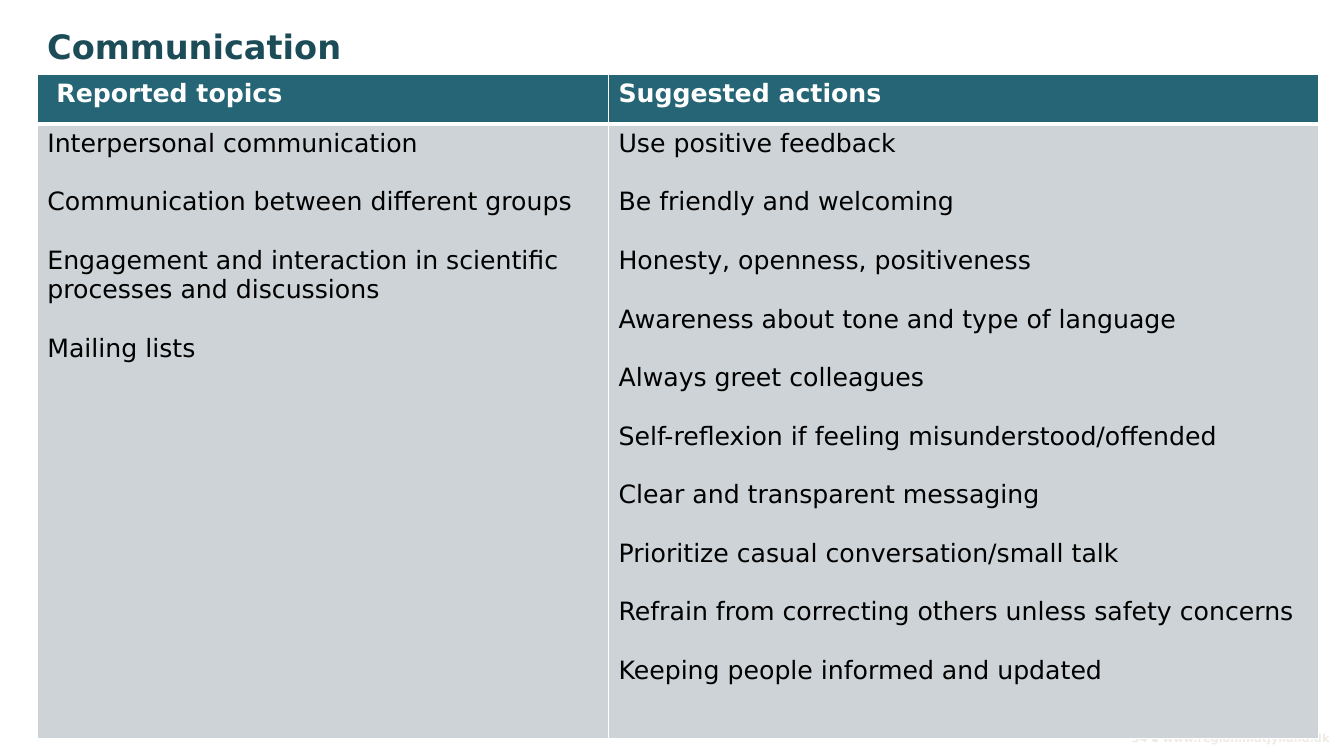
import dataclasses
import typing

import pptx
import pptx.dml.color
import pptx.enum.text
import pptx.oxml
import pptx.oxml.ns
import pptx.util

Inches = pptx.util.Inches
Pt = pptx.util.Pt

COLORS = {
    "title": "1C4C58",
    "header": "256575",
    "body": "CDD3D6",
    "white": "FFFFFF",
    "black": "000000",
    "footer": "EFECE6",
}
FONT = "DejaVu Sans"
TOPIC_GAP = 20.95


@dataclasses.dataclass(frozen=True)
class TextStyle:
    size: float
    color: str
    bold: bool = False
    align: pptx.enum.text.PP_ALIGN = pptx.enum.text.PP_ALIGN.LEFT


@dataclasses.dataclass(frozen=True)
class Label:
    text: str
    bounds: tuple[float, float, float, float]
    style: TextStyle
    frame_format: dict[str, typing.Any]


@dataclasses.dataclass(frozen=True)
class Column:
    heading: str
    width: float
    heading_margin: float
    entries: tuple[str, ...]


HEADER_STYLE = TextStyle(18, "white", bold=True)
BODY_STYLE = TextStyle(18, "black")

LABELS = (
    Label(
        "34 ▪ www.regionmidtjylland.dk",
        (9.81, 7.05, 3.39, 0.34),
        TextStyle(8, "footer", True, pptx.enum.text.PP_ALIGN.RIGHT),
        {
            "vertical_anchor": pptx.enum.text.MSO_ANCHOR.BOTTOM,
            "margin_left": 0,
            "margin_top": 0,
            "margin_right": 0,
            "margin_bottom": 0,
        },
    ),
    Label("Communication", (0.37, 0.21, 12.36, 0.5), TextStyle(24, "title", True), {}),
)

COLUMNS = (
    Column("Reported topics", 5.67, 0.19, (
        "Interpersonal communication",
        "Communication between different groups",
        "Engagement and interaction in scientific processes and discussions",
        "Mailing lists",
    )),
    Column("Suggested actions", 7.05, 0.1, (
        "Use positive feedback",
        "Be friendly and welcoming",
        "Honesty, openness, positiveness",
        "Awareness about tone and type of language",
        "Always greet colleagues",
        "Self-reflexion if feeling misunderstood/offended",
        "Clear and transparent messaging",
        "Prioritize casual conversation/small talk",
        "Refrain from correcting others unless safety concerns",
        "Keeping people informed and updated",
    )),
)
ROW_HEIGHTS = (0.49, 6.1)


def rgb(name: str) -> pptx.dml.color.RGBColor:
    return pptx.dml.color.RGBColor.from_string(COLORS[name])


def write_text(frame: typing.Any, lines: tuple[str, ...], style: TextStyle) -> None:
    for index, line in enumerate(lines):
        para = frame.add_paragraph() if index else frame.paragraphs[0]
        para.alignment = style.align
        if index:
            para.space_before = Pt(TOPIC_GAP)
        span = para.add_run()
        span.text = line
        font_format = {"name": FONT, "size": Pt(style.size), "bold": style.bold}
        for name, value in font_format.items():
            setattr(span.font, name, value)
        span.font.color.rgb = rgb(style.color)


def add_label(page: typing.Any, label: Label) -> None:
    box = page.shapes.add_textbox(*map(Inches, label.bounds))
    frame = box.text_frame
    frame_format = {"word_wrap": True, **label.frame_format}
    for name, value in frame_format.items():
        setattr(frame, name, value)
    write_text(frame, (label.text,), label.style)


def add_borders(cell: typing.Any, widths: dict[str, float]) -> None:
    properties = cell._tc.get_or_add_tcPr()
    for side, width in widths.items():
        properties.append(pptx.oxml.parse_xml(
            f'<a:ln{side} {pptx.oxml.ns.nsdecls("a")} w="{Pt(width)}">'
            f'<a:solidFill><a:srgbClr val="{COLORS["white"]}"/></a:solidFill>'
            f'</a:ln{side}>'
        ))


def fill_cell(
    cell: typing.Any,
    lines: tuple[str, ...],
    style: TextStyle,
    fill: str,
    borders: dict[str, float],
) -> None:
    add_borders(cell, borders)
    cell.fill.solid()
    cell.fill.fore_color.rgb = rgb(fill)
    write_text(cell.text_frame, lines, style)


def add_topics_table(page: typing.Any) -> None:
    width = sum(column.width for column in COLUMNS)
    table = page.shapes.add_table(
        len(ROW_HEIGHTS), len(COLUMNS),
        Inches(0.37), Inches(0.74), Inches(width), Inches(sum(ROW_HEIGHTS)),
    ).table
    for row, height in zip(table.rows, ROW_HEIGHTS):
        row.height = Inches(height)
    for index, column in enumerate(COLUMNS):
        table.columns[index].width = Inches(column.width)
        heading, body = table.cell(0, index), table.cell(1, index)
        heading.margin_left = Inches(column.heading_margin)
        fill_cell(heading, (column.heading,), HEADER_STYLE, "header",
                  {"L": 1, "R": 1, "T": 1, "B": 3})
        fill_cell(body, column.entries, BODY_STYLE, "body",
                  {"L": 1, "R": 1, "T": 3, "B": 1})


def main() -> None:
    deck = pptx.Presentation()
    deck.slide_width = Inches(13.34)
    deck.slide_height = Inches(7.5)
    page = deck.slides.add_slide(deck.slide_layouts[6])
    for label in LABELS:
        add_label(page, label)
    add_topics_table(page)
    deck.save("out.pptx")


if __name__ == "__main__":
    main()
